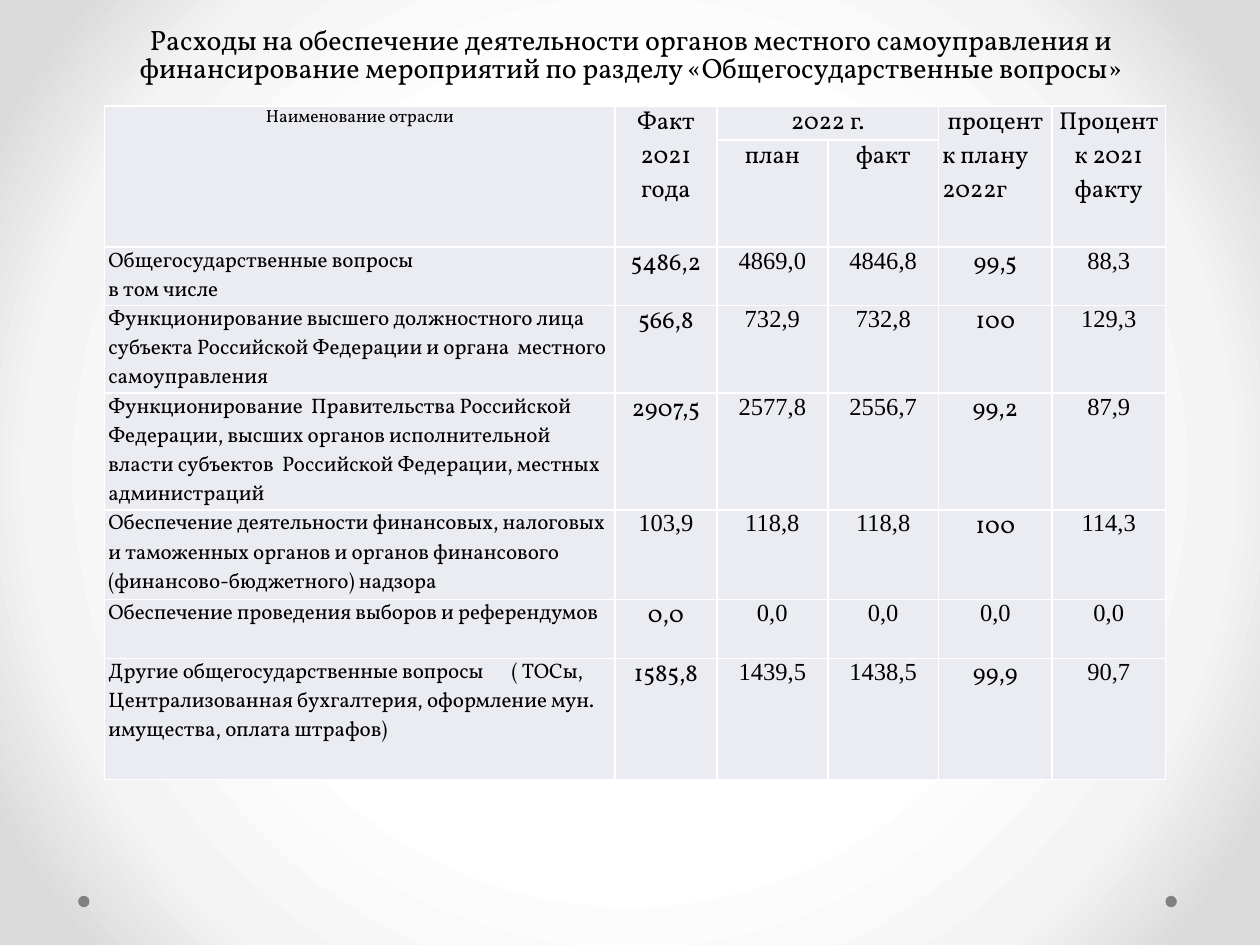
from dataclasses import dataclass

import pptx
import pptx.dml.color
import pptx.enum.shapes
import pptx.enum.text
import pptx.oxml
import pptx.oxml.ns
import pptx.util
from pptx.dml.color import RGBColor
from pptx.util import Inches

BLACK = RGBColor(0x00, 0x00, 0x00)
GREY = RGBColor(0x80, 0x80, 0x80)
CELL_FILL = RGBColor(0xEA, 0xEC, 0xF2)
BORDER = RGBColor(0xFF, 0xFF, 0xFF)
BACKGROUND_STOPS = (
    (50, RGBColor(0xFF, 0xFF, 0xFF)),
    (76, RGBColor(0xF4, 0xF4, 0xF4)),
    (92, RGBColor(0xDA, 0xDA, 0xDA)),
)
SERIF = "Vollkorn"
TIMES = "Times New Roman"
CENTER = pptx.enum.text.PP_ALIGN.CENTER
LEFT = pptx.enum.text.PP_ALIGN.LEFT

SLIDE_WIDTH, SLIDE_HEIGHT = Inches(10), Inches(7.5)
COLUMN_WIDTHS = (4.05, 0.81, 0.88, 0.88, 0.9, 0.9)
ROW_HEIGHTS = (0.25, 0.85, 0.39, 0.62, 0.87, 0.71, 0.47, 0.96)
TITLE = (
    "Расходы на обеспечение деятельности органов местного самоуправления и "
    "финансирование мероприятий по разделу «Общегосударственные вопросы»"
)


@dataclass(frozen=True)
class HeaderCell:
    row: int
    column: int
    lines: tuple
    row_span: int = 1
    column_span: int = 1
    size: int = 14
    alignments: tuple = (CENTER, CENTER)


@dataclass(frozen=True)
class Expense:
    lines: tuple
    values: tuple
    fonts: tuple = (SERIF, TIMES, TIMES, SERIF, TIMES)


HEADER = (
    HeaderCell(0, 0, ("Наименование отрасли",), row_span=2, size=10),
    HeaderCell(0, 1, ("Факт 2021 года",), row_span=2),
    HeaderCell(0, 2, ("2022 г.",), column_span=2),
    HeaderCell(0, 4, ("процент", "к плану 2022г"), row_span=2, alignments=(CENTER, LEFT)),
    HeaderCell(0, 5, ("Процент к 2021", "факту"), row_span=2),
    HeaderCell(1, 2, ("план",)),
    HeaderCell(1, 3, ("факт",)),
)
EXPENSES = (
    Expense(("Общегосударственные вопросы", "в том числе"),
            ("5486,2", "4869,0", "4846,8", "99,5", "88,3")),
    Expense(("Функционирование высшего должностного лица субъекта Российской "
             "Федерации и органа  местного самоуправления",),
            ("566,8", "732,9", "732,8", "100", "129,3")),
    Expense(("Функционирование  Правительства Российской Федерации, высших органов "
             "исполнительной власти субъектов  Российской Федерации, местных администраций",),
            ("2907,5", "2577,8", "2556,7", "99,2", "87,9")),
    Expense(("Обеспечение деятельности финансовых, налоговых и таможенных органов и "
             "органов финансового (финансово-бюджетного) надзора",),
            ("103,9", "118,8", "118,8", "100", "114,3"),
            (TIMES, TIMES, TIMES, SERIF, TIMES)),
    Expense(("Обеспечение проведения выборов и референдумов",),
            ("0,0",) * 5, (SERIF, TIMES, TIMES, TIMES, TIMES)),
    Expense(("Другие общегосударственные вопросы\t( ТОСы, Централизованная "
             "бухгалтерия, оформление мун. имущества, оплата штрафов)",),
            ("1585,8", "1439,5", "1438,5", "99,9", "90,7")),
)


def drawing_xml(tag: str, content: str, attributes: str = ""):
    namespace = pptx.oxml.ns.nsdecls("a")
    return pptx.oxml.parse_xml(f"<a:{tag} {namespace} {attributes}>{content}</a:{tag}>")


def write_text(frame, lines, *, size, font=SERIF, alignments=(CENTER, CENTER),
               spacing=None, tab_stop=None) -> None:
    frame.word_wrap = True
    for index, (line, alignment) in enumerate(zip(lines, alignments)):
        paragraph = frame.add_paragraph() if index else frame.paragraphs[0]
        paragraph.alignment = alignment
        if spacing:
            paragraph.line_spacing = spacing
        run = paragraph.add_run()
        run.text = line
        run.font.size = pptx.util.Pt(size)
        run.font.name = font
        run.font.bold = False
        run.font.color.rgb = BLACK
        if tab_stop and "\t" in line:
            properties = paragraph._p.get_or_add_pPr()
            properties.append(drawing_xml("tabLst", f'<a:tab pos="{tab_stop}" algn="l"/>'))


def paint_background(slide) -> None:
    slide.background.fill.gradient()
    gradient = slide.element.find(".//" + pptx.oxml.ns.qn("a:gradFill"))
    for child in list(gradient):
        gradient.remove(child)
    stops = "".join(f'<a:gs pos="{share * 1000}"><a:srgbClr val="{color}"/></a:gs>'
                    for share, color in BACKGROUND_STOPS)
    gradient.append(drawing_xml("gsLst", stops))
    gradient.append(drawing_xml(
        "path", '<a:fillToRect l="50000" t="50000" r="50000" b="50000"/>', 'path="circle"'))


def add_dot(slide, left_share: float) -> None:
    diameter = Inches(0.09)
    dot = slide.shapes.add_shape(
        pptx.enum.shapes.MSO_SHAPE.OVAL, int(SLIDE_WIDTH * left_share),
        int(SLIDE_HEIGHT * 0.948), diameter, diameter)
    dot.shadow.inherit = False
    dot.fill.solid()
    dot.fill.fore_color.rgb = GREY
    dot.line.fill.background()


def format_cell(cell) -> None:
    cell.margin_left = cell.margin_right = Inches(0.03)
    cell.margin_top = cell.margin_bottom = 0
    properties = cell._tc.get_or_add_tcPr()
    for side in ("lnL", "lnR", "lnT", "lnB"):
        properties.append(drawing_xml(
            side, f'<a:solidFill><a:srgbClr val="{BORDER}"/></a:solidFill>', 'w="12700"'))
    cell.fill.solid()
    cell.fill.fore_color.rgb = CELL_FILL


def add_expense_table(slide) -> None:
    table = slide.shapes.add_table(
        len(ROW_HEIGHTS), len(COLUMN_WIDTHS), Inches(0.83), Inches(0.84),
        Inches(sum(COLUMN_WIDTHS)), Inches(sum(ROW_HEIGHTS))).table
    for column, width in zip(table.columns, COLUMN_WIDTHS):
        column.width = Inches(width)
    for row, height in zip(table.rows, ROW_HEIGHTS):
        row.height = Inches(height)
    for cell in table.iter_cells():
        format_cell(cell)

    # Two header rows with merged cells
    for header in HEADER:
        cell = table.cell(header.row, header.column)
        if header.row_span * header.column_span > 1:
            cell.merge(table.cell(header.row + header.row_span - 1,
                                  header.column + header.column_span - 1))
        write_text(cell.text_frame, header.lines, size=header.size,
                   alignments=header.alignments)

    # Expense names and their figures
    for row, expense in enumerate(EXPENSES, start=2):
        write_text(table.cell(row, 0).text_frame, expense.lines, size=12,
                   alignments=(LEFT, LEFT), tab_stop=Inches(3.2))
        for column, (value, font) in enumerate(zip(expense.values, expense.fonts), start=1):
            write_text(table.cell(row, column).text_frame, (value,), size=14, font=font)


def main() -> None:
    presentation = pptx.Presentation()
    presentation.slide_width, presentation.slide_height = SLIDE_WIDTH, SLIDE_HEIGHT
    slide = presentation.slides.add_slide(presentation.slide_layouts[5])

    # Background and corner dots
    paint_background(slide)
    for left_share in (0.925, 0.062):
        add_dot(slide, left_share)

    # Title
    title = slide.shapes.title
    title.left, title.top = Inches(0.51), Inches(-0.34)
    title.width, title.height = Inches(9), Inches(1.06)
    title.text_frame.vertical_anchor = pptx.enum.text.MSO_ANCHOR.BOTTOM
    title.text_frame.auto_size = pptx.enum.text.MSO_AUTO_SIZE.NONE
    write_text(title.text_frame, (TITLE,), size=16, spacing=0.85)

    add_expense_table(slide)
    presentation.save("out.pptx")


if __name__ == "__main__":
    main()
